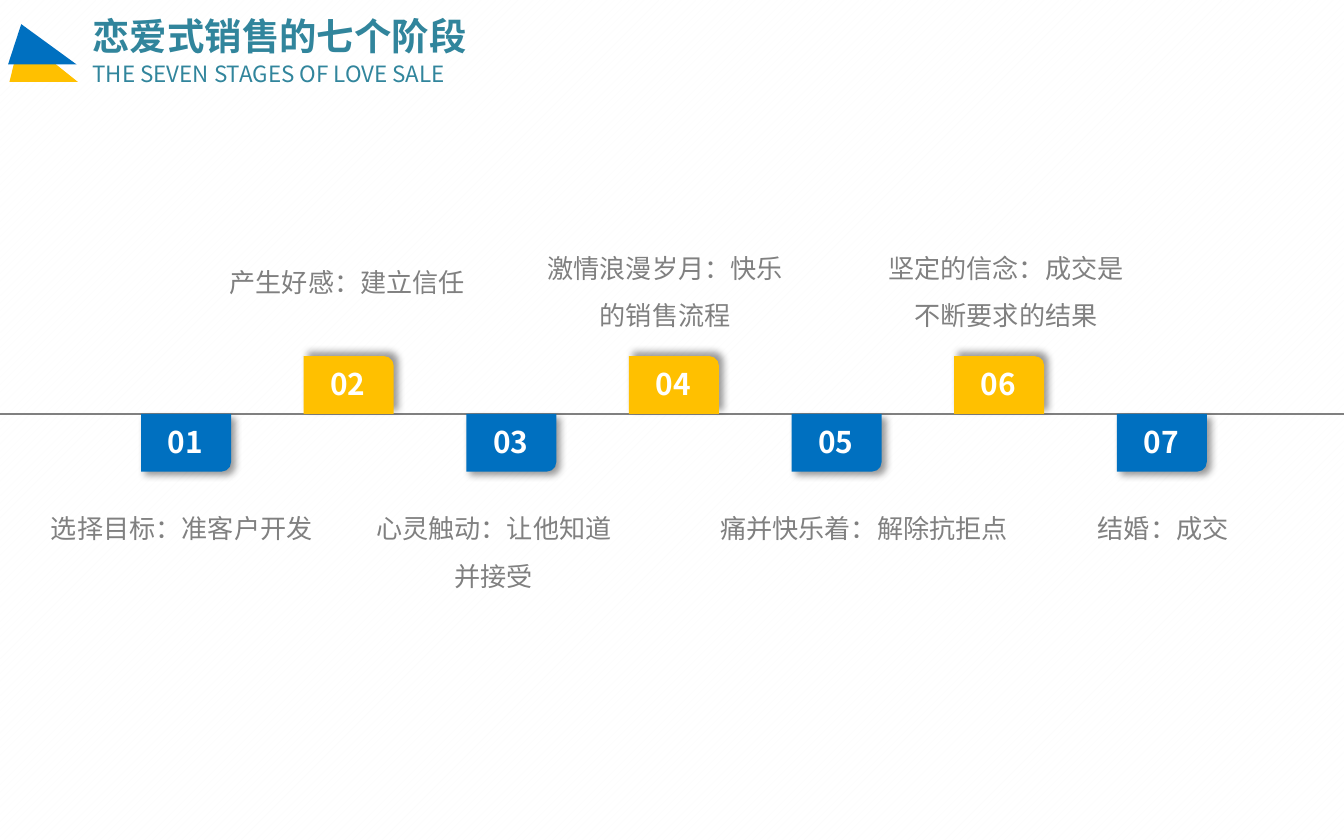
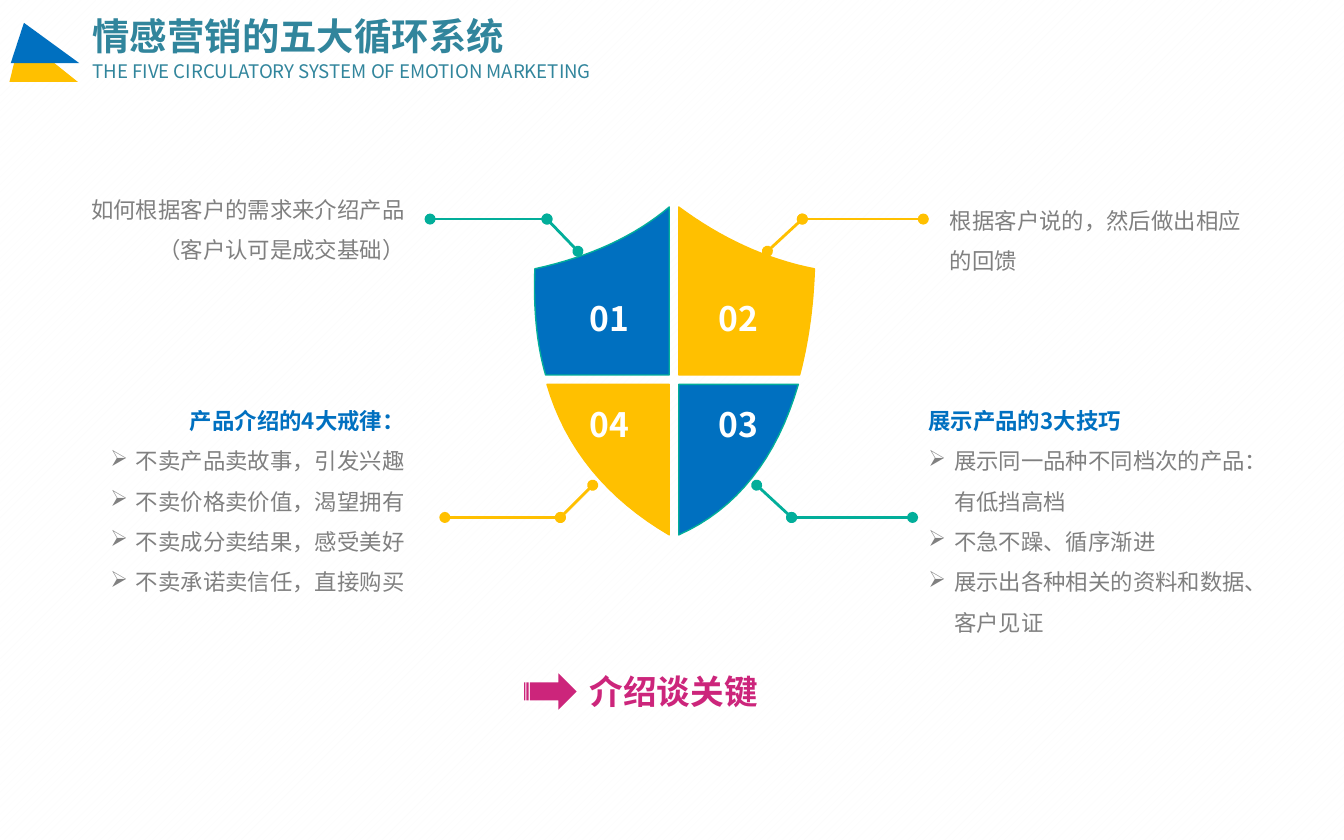
from lxml import etree
from pptx import Presentation
from pptx import util as u
from pptx.dml.color import RGBColor
from pptx.enum import dml, shapes, text
from pptx.oxml.ns import qn

FONT = "Noto Sans CJK SC"
BLUE, YELLOW, TEAL = "0070C0", "FFC000", "02AE9A"
TITLE, GREY, MAGENTA, WHITE = "31859C", "808080", "CC257B", "FFFFFF"
LEFT, CENTER, RIGHT = text.PP_ALIGN.LEFT, text.PP_ALIGN.CENTER, text.PP_ALIGN.RIGHT


def rgb(hex_color):
    return RGBColor.from_string(hex_color)


def inches(values):
    return [u.Inches(v) for v in values]


def set_all(obj, values):
    for name, value in values.items():
        setattr(obj, name, value)


def sub(parent, tag, **attrs):
    """Append a DrawingML child and return it."""
    return etree.SubElement(parent, qn(tag), **attrs)


def bezier(p0, curve, steps=16):
    """Points after p0 along a cubic curve given as x1, y1, x2, y2, x3, y3."""
    points = [p0, curve[:2], curve[2:4], curve[4:]]
    for i in range(1, steps + 1):
        t = i / steps
        weights = ((1 - t) ** 3, 3 * t * (1 - t) ** 2, 3 * t * t * (1 - t), t ** 3)
        yield tuple(sum(w * p[axis] for w, p in zip(weights, points)) for axis in (0, 1))


class Deck:
    def __init__(self):
        self.prs = Presentation()
        set_all(self.prs, {"slide_width": u.Inches(10), "slide_height": u.Inches(6.25)})
        fill = self.prs.slide_master.background.fill
        fill.patterned()
        fill.pattern = dml.MSO_PATTERN.WIDE_UPWARD_DIAGONAL
        fill.fore_color.rgb, fill.back_color.rgb = rgb("FBFBFB"), rgb(WHITE)
        self.s = None

    def slide(self, title, subtitle, subtitle_size, subtitle_box, peak):
        """Start a slide with its heading; peak is the corner of the blue triangle."""
        self.s = self.prs.slides.add_slide(self.prs.slide_layouts[6])
        title_width = 0.25 + 0.28 * len(title)
        self.text((0.59, 0.05, title_width, 0.44), [title], 20, TITLE, bold=True, wrap=False)
        self.text((0.59, 0.4, *subtitle_box), [subtitle], subtitle_size, TITLE, wrap=False)
        triangle = shapes.MSO_SHAPE.ISOSCELES_TRIANGLE
        self.shape(triangle, (0.07, 0.27, 0.51, 0.34), YELLOW, adjust=0.165)
        self.shape(triangle, (*peak, 0.51, 0.3), BLUE, adjust=0.193)

    def paint(self, sp, fill, line=None):
        sp.shadow.inherit = False
        sp.fill.solid()
        sp.fill.fore_color.rgb = rgb(fill)
        if line:
            sp.line.color.rgb, sp.line.width = rgb(line), u.Pt(0.75)
        else:
            sp.line.fill.background()

    def shape(self, kind, box, fill, adjust=None):
        sp = self.s.shapes.add_shape(kind, *inches(box))
        self.paint(sp, fill)
        if adjust is not None:
            sp.adjustments[0] = adjust
        return sp

    def text(self, box, paras, size, color, bold=False, align=LEFT, spacing=None,
             wrap=True, bullets=()):
        """Add a text box: plain paragraphs, then grey bulleted ones."""
        tf = self.s.shapes.add_textbox(*inches(box)).text_frame
        set_all(tf, {"word_wrap": wrap, "auto_size": text.MSO_AUTO_SIZE.SHAPE_TO_FIT_TEXT})
        for i, words in enumerate([*paras, *bullets]):
            bulleted = i >= len(paras)
            p = tf.add_paragraph() if i else tf.paragraphs[0]
            set_all(p, {"alignment": align, "line_spacing": spacing})
            r = p.add_run()
            r.text = words
            set_all(r.font, {"size": u.Pt(size), "bold": bold and not bulleted, "name": FONT})
            r.font.color.rgb = rgb(GREY if bulleted else color)
            sub(r.font._element, "a:ea", typeface=FONT)
            if bulleted:
                pPr = p._p.get_or_add_pPr()
                indent = u.Inches(0.19)
                pPr.set("marL", str(indent))
                pPr.set("indent", str(-indent))
                sub(pPr, "a:buChar", char="➢")

    def line(self, start, end, color, width, dots=False):
        cx = self.s.shapes.add_connector(shapes.MSO_CONNECTOR.STRAIGHT, *inches(start + end))
        cx.line.color.rgb, cx.line.width = rgb(color), u.Pt(width)
        if dots:
            for tag in ("a:headEnd", "a:tailEnd"):
                sub(cx.line._ln, tag, type="oval")
        sub(cx._element.spPr, "a:effectLst")

    def leader(self, points, color):
        for start, end in zip(points, points[1:]):
            self.line(start, end, color, 1.5, dots=True)

    def tab(self, left, number, below):
        """Numbered tab that hangs below the timeline or stands on it."""
        top = 3.08 if below else 2.65
        sp = self.shape(shapes.MSO_SHAPE.ROUND_1_RECTANGLE, (left, top, 0.67, 0.43),
                        BLUE if below else YELLOW)
        spPr = sp._element.spPr
        if below:
            spPr.xfrm.set("flipV", "1")
        shadow = sub(spPr.find(qn("a:effectLst")), "a:outerShdw", blurRad=str(u.Pt(4)),
                     dist=str(u.Pt(3)), dir=str((45 if below else 315) * 60000),
                     algn="tl" if below else "bl", rotWithShape="0")
        sub(sub(shadow, "a:srgbClr", val="000000"), "a:alpha", val="40000")
        self.text((left + 0.1, top + 0.02, 0.48, 0.37), [number], 16, WHITE,
                  bold=True, wrap=False)

    def outline(self, start, steps, fill, line):
        """Closed outline; a step is a point or a cubic curve of six numbers."""
        points = [start]
        for step in steps:
            points += [step] if len(step) == 2 else bezier(points[-1], step)
        fb = self.s.shapes.build_freeform(*inches(start))
        fb.add_line_segments([inches(p) for p in points[1:]], close=True)
        self.paint(fb.convert_to_shape(), fill, line)


def stages(deck):
    deck.slide("恋爱式销售的七个阶段", "THE SEVEN STAGES OF LOVE SALE", 12, (3, 0.3),
               (0.06, 0.18))
    deck.line((0, 3.08), (10, 3.08), GREY, 1)
    captions = [
        ("选择目标：准客户开发", (0.28, 3.65, 2.28, 0.45), LEFT),
        ("产生好感：建立信任", (1.61, 1.82, 2.06, 0.43), LEFT),
        ("心灵触动：让他知道并接受", (2.64, 3.65, 2.07, 0.81), CENTER),
        ("激情浪漫岁月：快乐的销售流程", (3.93, 1.71, 2.04, 0.77), CENTER),
        ("痛并快乐着：解除抗拒点", (5.26, 3.65, 2.47, 0.45), LEFT),
        ("坚定的信念：成交是不断要求的结果", (6.44, 1.71, 2.09, 0.77), CENTER),
        ("结婚：成交", (8.07, 3.65, 1.5, 0.45), LEFT),
    ]
    for i, (words, box, align) in enumerate(captions):
        deck.tab(1.05 + 1.21 * i, f"{i + 1:02}", below=i % 2 == 0)
        deck.text(box, [words], 14, GREY, align=align, spacing=1.5)


def cycle(deck):
    deck.slide("情感营销的五大循环系统", "THE FIVE CIRCULATORY SYSTEM OF EMOTION MARKETING",
               10, (4.22, 0.27), (0.08, 0.17))
    deck.text((4.29, 4.94, 1.66, 0.4), ["介绍谈关键"], 18, MAGENTA, bold=True)
    deck.shape(shapes.MSO_SHAPE.STRIPED_RIGHT_ARROW, (3.9, 5.01, 0.39, 0.27), MAGENTA)

    quarters = [
        ("01", (4.29, 2.17), BLUE, TEAL, (3.98, 2),
         [(4.39, 1.91, 4.72, 1.76, 4.98, 1.54), (4.98, 2.79), (4.06, 2.79),
          (3.99, 2.55, 3.97, 2.28, 3.98, 2)]),
        ("02", (5.25, 2.17), YELLOW, YELLOW, (5.95, 2.79),
         [(5.05, 2.79), (5.05, 1.54), (5.36, 1.77, 5.7, 1.93, 6.06, 2),
          (6.05, 2.3, 6.01, 2.56, 5.95, 2.79)]),
        ("04", (4.29, 2.96), YELLOW, YELLOW, (4.98, 2.86),
         [(4.98, 3.98), (4.52, 3.71, 4.21, 3.34, 4.07, 2.86)]),
        ("03", (5.25, 2.96), BLUE, TEAL, (5.05, 2.86),
         [(5.94, 2.86), (5.78, 3.41, 5.48, 3.79, 5.05, 3.98)]),
    ]
    for number, corner, fill, line, start, steps in quarters:
        deck.outline(start, steps, fill, line)
        deck.text((*corner, 0.51, 0.4), [number], 18, WHITE, bold=True, wrap=False)

    deck.leader([(4.41, 3.61), (4.17, 3.85), (3.31, 3.85)], YELLOW)
    deck.leader([(5.63, 3.61), (5.89, 3.85), (6.79, 3.85)], TEAL)
    deck.leader([(4.3, 1.87), (4.07, 1.63), (3.2, 1.63)], TEAL)
    deck.leader([(5.71, 1.87), (5.97, 1.63), (6.87, 1.63)], YELLOW)

    deck.text((0.51, 1.31, 2.6, 0.71), ["如何根据客户的需求来介绍产品（客户认可是成交基础）"],
              12, GREY, align=RIGHT, spacing=1.5)
    deck.text((6.97, 1.39, 2.44, 0.71), ["根据客户说的，然后做出相应的回馈"],
              12, GREY, spacing=1.5)
    deck.text((0.51, 2.88, 2.6, 1.62), ["产品介绍的4大戒律："], 12, BLUE, bold=True,
              align=RIGHT, spacing=1.5,
              bullets=["不卖产品卖故事，引发兴趣", "不卖价格卖价值，渴望拥有",
                       "不卖成分卖结果，感受美好", "不卖承诺卖信任，直接购买"])
    deck.text((6.81, 2.88, 2.71, 1.92), ["展示产品的3大技巧"], 12, BLUE, bold=True,
              spacing=1.5,
              bullets=["展示同一品种不同档次的产品：有低挡高档", "不急不躁、循序渐进",
                       "展示出各种相关的资料和数据、客户见证"])


def main():
    deck = Deck()
    stages(deck)
    cycle(deck)
    deck.prs.save("out.pptx")


if __name__ == "__main__":
    main()
